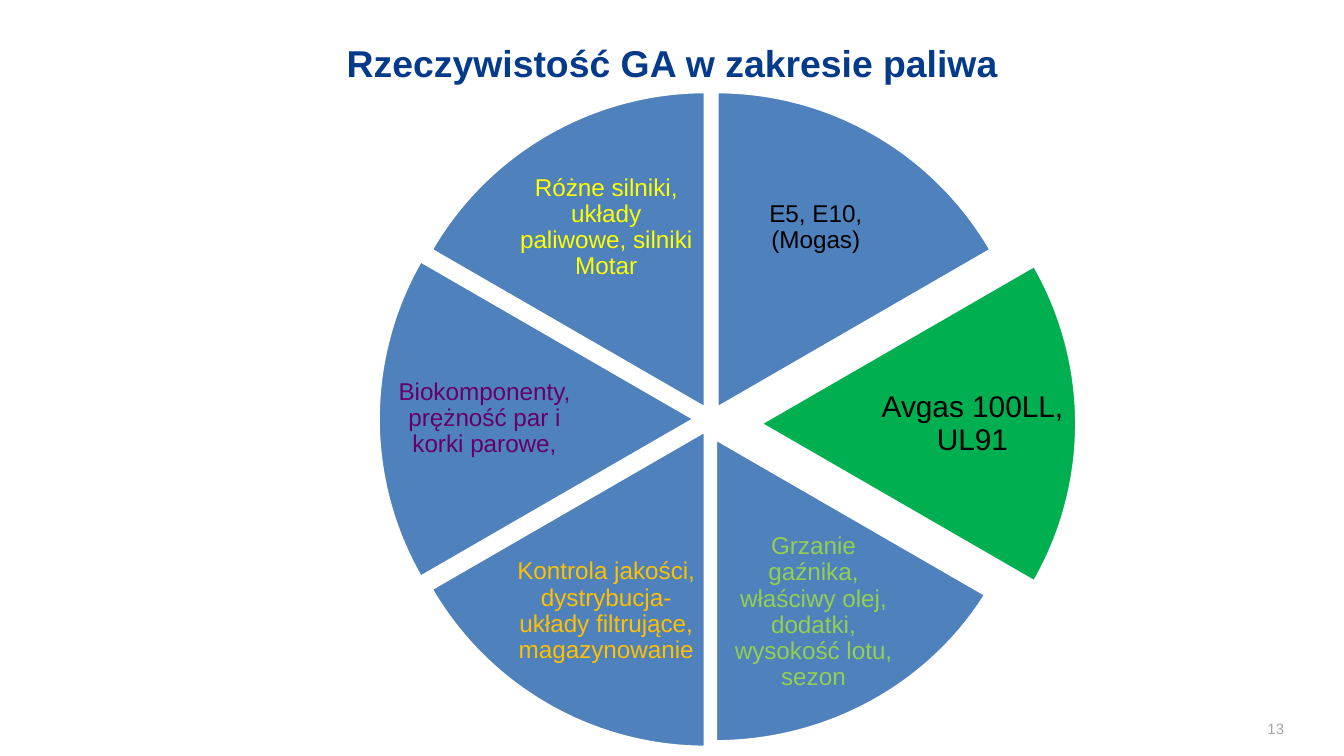
from pptx import Presentation
from pptx.dml.color import RGBColor
from pptx.enum.shapes import MSO_SHAPE
from pptx.enum.text import MSO_ANCHOR, PP_ALIGN
from pptx.util import Pt

PIE = MSO_SHAPE.PARTIAL_CIRCLE if hasattr(MSO_SHAPE, "PARTIAL_CIRCLE") else MSO_SHAPE.PIE
TOP, MIDDLE = MSO_ANCHOR.TOP, MSO_ANCHOR.MIDDLE
LEFT, CENTER, RIGHT = PP_ALIGN.LEFT, PP_ALIGN.CENTER, PP_ALIGN.RIGHT

COLORS = {
    "navy": "043A8A", "gray": "A6A6A6", "white": "FFFFFF", "black": "000000",
    "blue": "4F81BD", "green": "00B050", "lime": "92D050",
    "amber": "FFC000", "purple": "660066", "yellow": "FFFF00",
}

TITLE = "Rzeczywistość GA w zakresie paliwa"
PAGE_NUMBER = "13"
DIAMETER = 340
FIRST_ANGLE, SWEEP, FULL_TURN = 270, 60, 360
UNITS_PER_DEGREE = 0.6

WEDGES = [
    {"label": "E5, E10, (Mogas)", "ink": "black",
     "pie": (214, 49), "box": (387.5, 85.5, 99, 73)},
    {"label": "Avgas 100LL, UL91", "ink": "black", "fill": "green", "size": 16,
     "pie": (237, 57), "box": (469.5, 193, 103, 68.5)},
    {"label": "Grzanie gaźnika, właściwy olej, dodatki, wysokość lotu, sezon",
     "ink": "lime", "pie": (214, 72), "extent": (338.5, 325.5),
     "box": (386.5, 293, 98.5, 70)},
    {"label": "Kontrola jakości, dystrybucja- układy filtrujące, magazynowanie",
     "ink": "amber", "pie": (208, 60.5), "box": (275, 291, 99.5, 73)},
    {"label": "Biokomponenty, prężność par i korki parowe,", "ink": "purple",
     "pie": (202.5, 54.5), "box": (208, 190, 103, 68.5)},
    {"label": "Różne silniki, układy paliwowe, silniki Motar", "ink": "yellow",
     "pie": (208, 49), "box": (275, 85.5, 99.5, 73)},
]


def color(name):
    return RGBColor.from_string(COLORS[name])


def write(holder, text, *, box, size, ink, align=CENTER, anchor=MIDDLE,
          bold=False, inset=(7.2, 3.6), spacing=1.0):
    holder.left, holder.top, holder.width, holder.height = map(Pt, box)
    frame = holder.text_frame
    frame.word_wrap = True
    frame.vertical_anchor = anchor
    frame.margin_left = frame.margin_right = Pt(inset[0])
    frame.margin_top = frame.margin_bottom = Pt(inset[1])
    paragraph = frame.paragraphs[0]
    paragraph.alignment = align
    paragraph.line_spacing = spacing
    run = paragraph.add_run()
    run.text = text
    run.font.name = "Arial"
    run.font.size = Pt(size)
    run.font.bold = bold
    run.font.color.rgb = color(ink)


def add_wedge(slide, index, wedge):
    extent = wedge.get("extent", (DIAMETER, DIAMETER))
    pie = slide.shapes.add_shape(PIE, *map(Pt, wedge["pie"] + extent))
    start = FIRST_ANGLE + index * SWEEP
    for side in range(2):
        angle = (start + side * SWEEP) % FULL_TURN
        pie.adjustments[side] = angle * UNITS_PER_DEGREE
    pie.shadow.inherit = False
    pie.fill.solid()
    pie.fill.fore_color.rgb = color(wedge.get("fill", "blue"))
    pie.line.color.rgb = color("white")
    pie.line.width = Pt(2)


def main():
    deck = Presentation()
    deck.slide_width, deck.slide_height = Pt(720), Pt(405)
    slide = deck.slides.add_slide(deck.slide_layouts[5])

    write(slide.shapes.title, TITLE, box=(178.5, 18, 510.5, 42), size=20,
          ink="navy", align=LEFT, anchor=TOP, bold=True)
    write(slide.shapes.add_textbox(0, 0, 0, 0), PAGE_NUMBER,
          box=(657.5, 379.5, 37.5, 21.5), size=8, ink="gray", align=RIGHT)

    for index, wedge in enumerate(WEDGES):
        add_wedge(slide, index, wedge)
        write(slide.shapes.add_textbox(0, 0, 0, 0), wedge["label"],
              box=wedge["box"], size=wedge.get("size", 13), ink=wedge["ink"],
              inset=(1.3, 1.3), spacing=0.9)

    deck.save("out.pptx")


if __name__ == "__main__":
    main()
